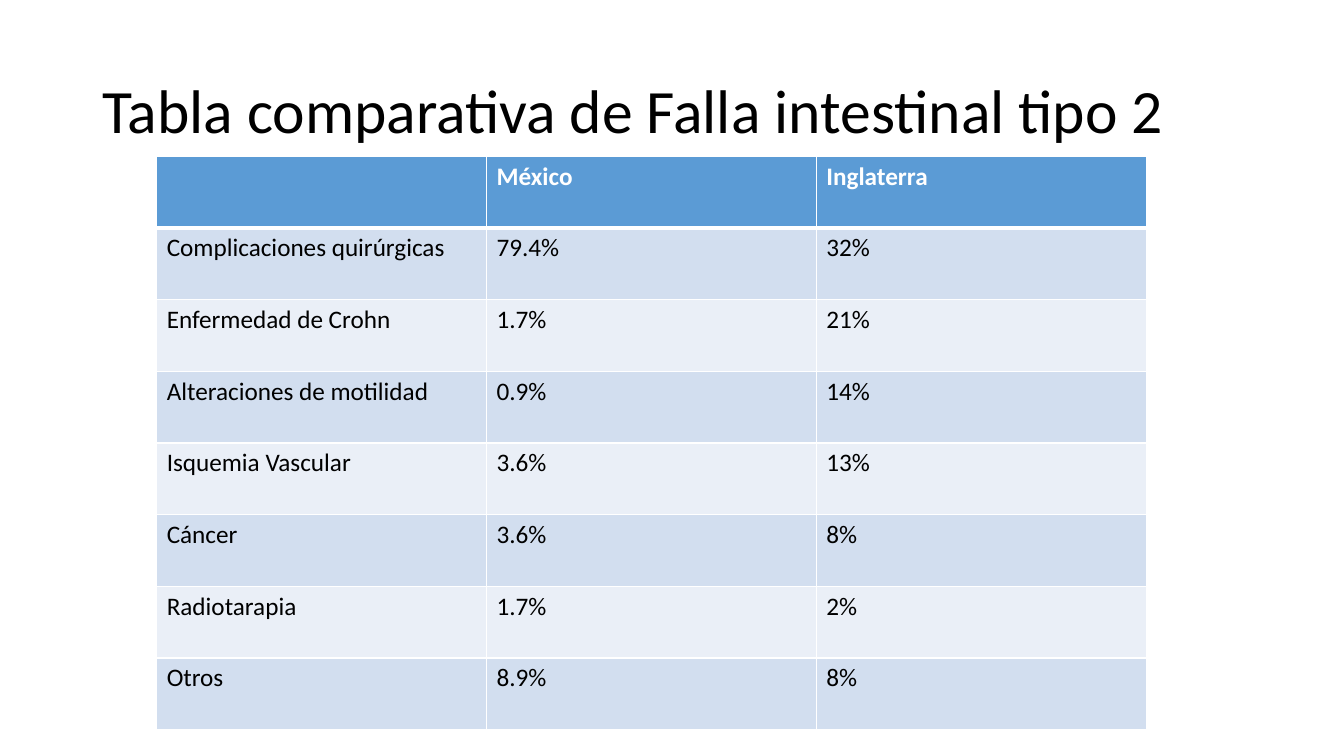
from dataclasses import dataclass

from lxml import etree
from pptx import Presentation
from pptx import util as u
from pptx.dml.color import RGBColor
from pptx.enum import text
from pptx.oxml.ns import qn

FONT = "Calibri"
COLOURS = {
    "black": "000000",
    "white": "FFFFFF",
    "header": "5B9BD5",
    "odd": "D2DEEF",
    "even": "EAEFF7",
}
COLUMN_WIDTH = u.Pt(235.6)
ROW_HEIGHT = u.Pt(51.2)
THIN, THICK = u.Pt(1), u.Pt(3)


@dataclass
class Row:
    cause: str
    mexico: str
    england: str


ROWS = [
    Row("", "México", "Inglaterra"),
    Row("Complicaciones quirúrgicas", "79.4%", "32%"),
    Row("Enfermedad de Crohn", "1.7%", "21%"),
    Row("Alteraciones de motilidad", "0.9%", "14%"),
    Row("Isquemia Vascular", "3.6%", "13%"),
    Row("Cáncer", "3.6%", "8%"),
    Row("Radiotarapia", "1.7%", "2%"),
    Row("Otros", "8.9%", "8%"),
]


def write(frame, content: str, *, size: float, colour: str,
          bold: bool = False, line_spacing: float = 1.0) -> None:
    para = frame.paragraphs[0]
    para.alignment = text.PP_ALIGN.LEFT
    para.line_spacing = line_spacing
    para.font.size = u.Pt(size)
    if content:
        span = para.add_run()
        span.text = content
        span.font.name = FONT
        span.font.size = u.Pt(size)
        span.font.bold = bold
        span.font.color.rgb = RGBColor.from_string(COLOURS[colour])


def add_border(cell, side: str, width: int) -> None:
    properties = cell._tc.get_or_add_tcPr()
    line = etree.SubElement(properties, qn(f"a:ln{side}"), w=str(width))
    fill = etree.SubElement(line, qn("a:solidFill"))
    etree.SubElement(fill, qn("a:srgbClr"), val=COLOURS["white"])


def format_cell(cell, content: str, row_index: int) -> None:
    header = row_index == 0
    widths = {
        "L": THIN,
        "R": THIN,
        "T": THICK if row_index == 1 else THIN,
        "B": THICK if header else THIN,
    }
    for side, width in widths.items():
        add_border(cell, side, width)
    band = "header" if header else ("odd" if row_index % 2 else "even")
    cell.fill.solid()
    cell.fill.fore_color.rgb = RGBColor.from_string(COLOURS[band])
    write(cell.text_frame, content, size=18,
          colour="white" if header else "black", bold=header)


def add_title(page) -> None:
    title = page.shapes.title
    title.left, title.top = u.Pt(66), u.Pt(28.75)
    title.width, title.height = u.Pt(828), u.Pt(104.4)
    frame = title.text_frame
    frame.word_wrap = True
    frame.auto_size = text.MSO_AUTO_SIZE.NONE
    frame.vertical_anchor = text.MSO_ANCHOR.MIDDLE
    write(frame, "Tabla comparativa de Falla intestinal tipo 2",
          size=44, colour="black", line_spacing=0.9)


def add_comparison(page) -> None:
    table = page.shapes.add_table(
        len(ROWS), 3, u.Pt(111.9), u.Pt(111.6),
        COLUMN_WIDTH * 3, ROW_HEIGHT * len(ROWS)).table
    for column in table.columns:
        column.width = COLUMN_WIDTH
    for row_index, row in enumerate(ROWS):
        table.rows[row_index].height = ROW_HEIGHT
        contents = (row.cause, row.mexico, row.england)
        for column_index, content in enumerate(contents):
            format_cell(table.cell(row_index, column_index), content, row_index)


def main() -> None:
    deck = Presentation()
    deck.slide_width, deck.slide_height = u.Pt(960), u.Pt(540)
    page = deck.slides.add_slide(deck.slide_layouts.get_by_name("Title Only"))
    add_title(page)
    add_comparison(page)
    deck.save("out.pptx")


if __name__ == "__main__":
    main()
